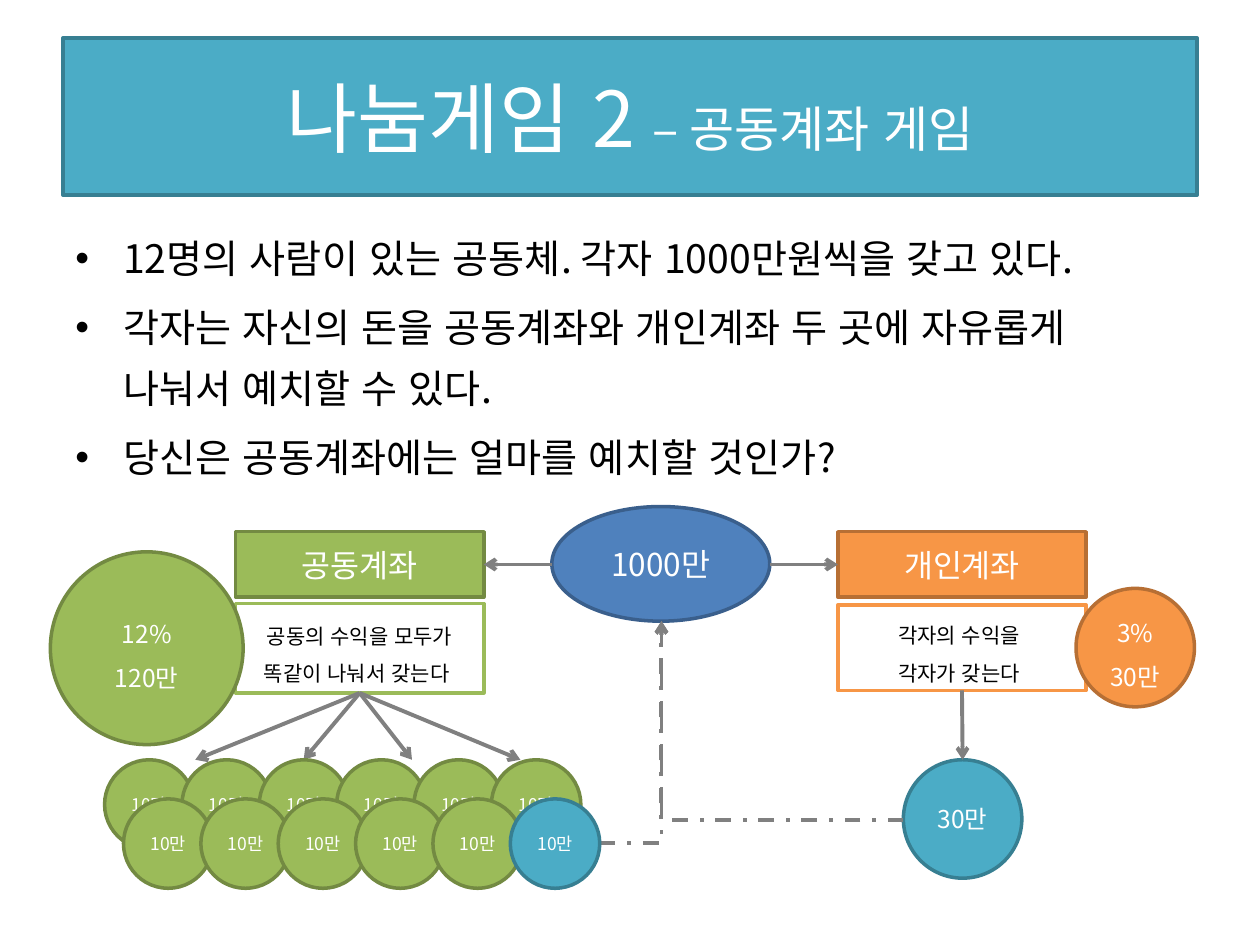
import pptx
import pptx.dml.color
import pptx.enum.dml
import pptx.enum.lang
import pptx.enum.shapes
import pptx.enum.text
import pptx.oxml.ns
import pptx.util
from lxml import etree
from pptx.util import Inches

FONT = "Noto Sans CJK KR"
WHITE, BLACK, GRAY = "FFFFFF", "000000", "808080"
GREEN, DARK_GREEN = "9BBB59", "738A42"
ORANGE, DARK_ORANGE = "F79646", "B76F34"
TEAL, DARK_TEAL = "4BACC6", "377F92"
BLUE, DARK_BLUE = "4F81BD", "3A5F8C"
RECTANGLE = pptx.enum.shapes.MSO_SHAPE.RECTANGLE
OVAL = pptx.enum.shapes.MSO_SHAPE.OVAL
CENTER = pptx.enum.text.PP_ALIGN.CENTER
MIDDLE = pptx.enum.text.MSO_ANCHOR.MIDDLE
STRAIGHT = pptx.enum.shapes.MSO_CONNECTOR.STRAIGHT
ELBOW = pptx.enum.shapes.MSO_CONNECTOR.ELBOW
TOP, LEFT, BOTTOM, RIGHT = range(4)


def color(value):
    return pptx.dml.color.RGBColor.from_string(value)


def add_element(parent, tag, **attributes):
    return etree.SubElement(parent, pptx.oxml.ns.qn(tag), attributes)


def add_run(paragraph, text, size, font_color):
    run = paragraph.add_run()
    run.text = text
    run.font.size = pptx.util.Pt(size)
    run.font.color.rgb = color(font_color)
    run.font.language_id = pptx.enum.lang.MSO_LANGUAGE_ID.KOREAN
    run.font.name = FONT
    add_element(run.font._element, "a:ea", typeface=FONT)


def add_paragraphs(frame, lines, size, font_color, spacing):
    for index, line in enumerate(lines):
        paragraph = frame.add_paragraph() if index else frame.paragraphs[0]
        paragraph.line_spacing = spacing
        add_run(paragraph, line, size, font_color)


def paint(shape, fill, line):
    shape.fill.solid()
    shape.fill.fore_color.rgb = color(fill)
    shape.line.color.rgb = color(line)
    shape.line.width = pptx.util.Pt(2)


def place(shape, left, top, width, height):
    shape.left, shape.top = Inches(left), Inches(top)
    shape.width, shape.height = Inches(width), Inches(height)


def add_block(slide, kind, box, fill, line, lines, size, font_color=WHITE, spacing=1.0):
    shape = slide.shapes.add_shape(kind, *map(Inches, box))
    shape.shadow.inherit = False
    paint(shape, fill, line)
    frame = shape.text_frame
    frame.word_wrap = True
    frame.vertical_anchor = MIDDLE
    add_paragraphs(frame, lines, size, font_color, spacing)
    for paragraph in frame.paragraphs:
        paragraph.alignment = CENTER
    return shape


def add_arrow(slide, start, end, kind=STRAIGHT):
    connector = slide.shapes.add_connector(kind, *map(Inches, start + end))
    connector.line.color.rgb = color(GRAY)
    connector.line.width = pptx.util.Pt(2.25)
    if kind == ELBOW:
        connector.line.dash_style = pptx.enum.dml.MSO_LINE.DASH_DOT
        geometry = connector._element.spPr.find(pptx.oxml.ns.qn("a:prstGeom"))
        geometry.set("prst", "bentConnector2")
    add_element(connector.line._get_or_add_ln(), "a:tailEnd", type="arrow")
    add_element(connector._element.spPr, "a:effectLst")
    return connector


def add_title(slide):
    title = slide.shapes.title
    place(title, 0.5, 0.3, 9, 1.25)
    paint(title, TEAL, DARK_TEAL)
    title.text_frame.vertical_anchor = MIDDLE
    paragraph = title.text_frame.paragraphs[0]
    paragraph.alignment = CENTER
    add_run(paragraph, "나눔게임 2 ", 44, WHITE)
    add_run(paragraph, "– 공동계좌 게임", 28, WHITE)


def add_bullets(slide, box, lines):
    frame = slide.shapes.add_textbox(*map(Inches, box)).text_frame
    frame.word_wrap = True
    frame.margin_right = Inches(0.4)
    add_paragraphs(frame, lines, 22.4, BLACK, 1.3)
    for paragraph in frame.paragraphs:
        paragraph.space_before = pptx.util.Pt(4.5)
        properties = paragraph._p.get_or_add_pPr()
        properties.set("marL", str(Inches(0.38)))
        properties.set("indent", str(Inches(-0.38)))
        add_element(properties, "a:buFont", typeface="Arial")
        add_element(properties, "a:buChar", char="•")


def add_accounts(slide):
    add_block(slide, OVAL, (4.38, 4.02, 1.73, 0.91), BLUE, DARK_BLUE, ["1000만"], 18)
    shared = add_block(slide, RECTANGLE, (1.87, 4.22, 1.97, 0.52), GREEN, DARK_GREEN,
                       ["공동계좌"], 18)
    shared_rule = add_block(slide, RECTANGLE, (1.87, 4.79, 1.97, 0.71), WHITE, GREEN,
                            ["공동의 수익을 모두가 똑같이 나눠서 갖는다 "], 12, BLACK, 1.5)
    personal = add_block(slide, RECTANGLE, (6.65, 4.22, 1.97, 0.52), ORANGE, DARK_ORANGE,
                         ["개인계좌"], 18)
    personal_rule = add_block(slide, RECTANGLE, (6.65, 4.8, 1.97, 0.68), WHITE, ORANGE,
                              ["각자의 수익을 ", "각자가 갖는다 "], 12, BLACK, 1.5)
    for index in range(4):
        arrow = add_arrow(slide, (2.85, 5.5), (1.55 + 0.86 * index, 6.03))
        arrow.begin_connect(shared_rule, BOTTOM)
    add_block(slide, OVAL, (7.17, 6.03, 0.94, 0.94), TEAL, DARK_TEAL, ["30만"], 14)
    add_arrow(slide, (7.64, 5.48), (7.64, 6.03)).begin_connect(personal_rule, BOTTOM)
    add_arrow(slide, (4.38, 4.48), (3.84, 4.48)).end_connect(shared, RIGHT)
    add_arrow(slide, (6.11, 4.48), (6.65, 4.48)).end_connect(personal, LEFT)
    add_block(slide, OVAL, (8.54, 4.67, 0.94, 0.94), ORANGE, DARK_ORANGE,
              ["3%", "30만"], 14, spacing=1.5)
    add_block(slide, OVAL, (0.4, 4.38, 1.53, 1.53), GREEN, DARK_GREEN,
              ["12%", "120만"], 14, spacing=1.5)


def add_shares(slide):
    columns = 6
    for row, (left, top) in enumerate([(0.83, 6.03), (0.98, 6.34)]):
        for column in range(columns):
            own_share = row == 1 and column == columns - 1
            fill, line = (TEAL, DARK_TEAL) if own_share else (GREEN, DARK_GREEN)
            box = (left + column * 3.07 / (columns - 1), top, 0.71, 0.71)
            add_block(slide, OVAL, box, fill, line, ["10만"], 10)


def main():
    presentation = pptx.Presentation()
    presentation.slide_width = Inches(10)
    presentation.slide_height = Inches(7.5)
    slide = presentation.slides.add_slide(presentation.slide_layouts[5])
    add_title(slide)
    add_accounts(slide)
    add_bullets(slide, (0.5, 1.7, 9, 2.2), [
        "12명의 사람이 있는 공동체. 각자 1000만원씩을 갖고 있다.",
        "각자는 자신의 돈을 공동계좌와 개인계좌 두 곳에 자유롭게 나눠서 예치할 수 있다.",
        "당신은 공동계좌에는 얼마를 예치할 것인가?",
    ])
    for start in [(4.76, 6.69), (7.17, 6.51)]:
        add_arrow(slide, start, (5.25, 4.93), ELBOW)
    add_shares(slide)
    presentation.save("out.pptx")


if __name__ == "__main__":
    main()
